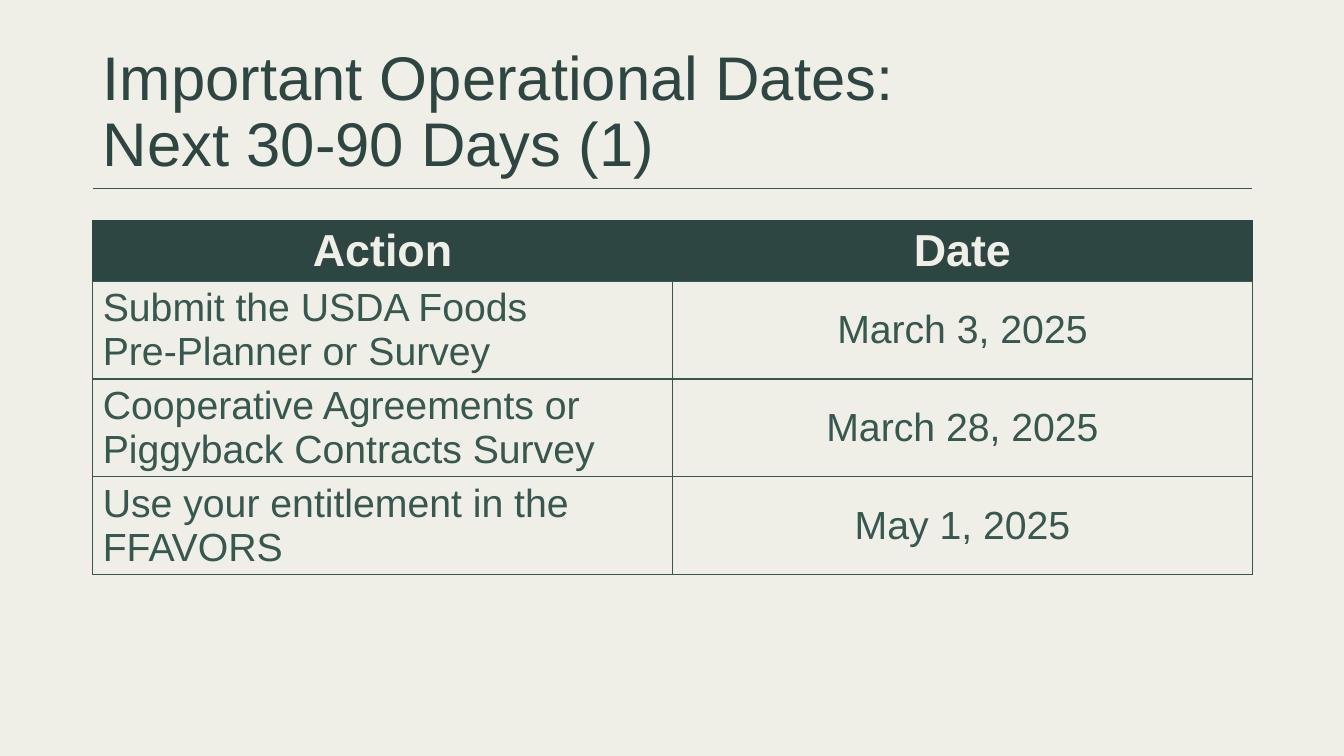
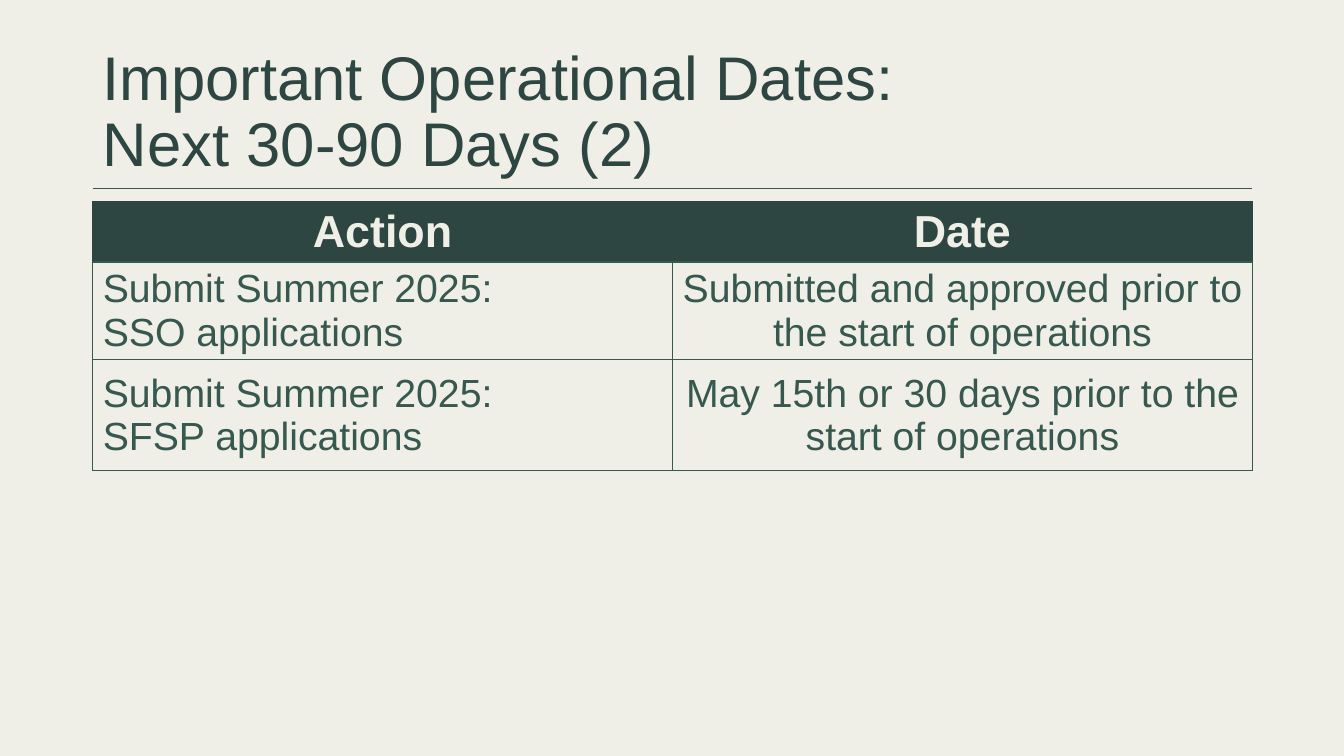
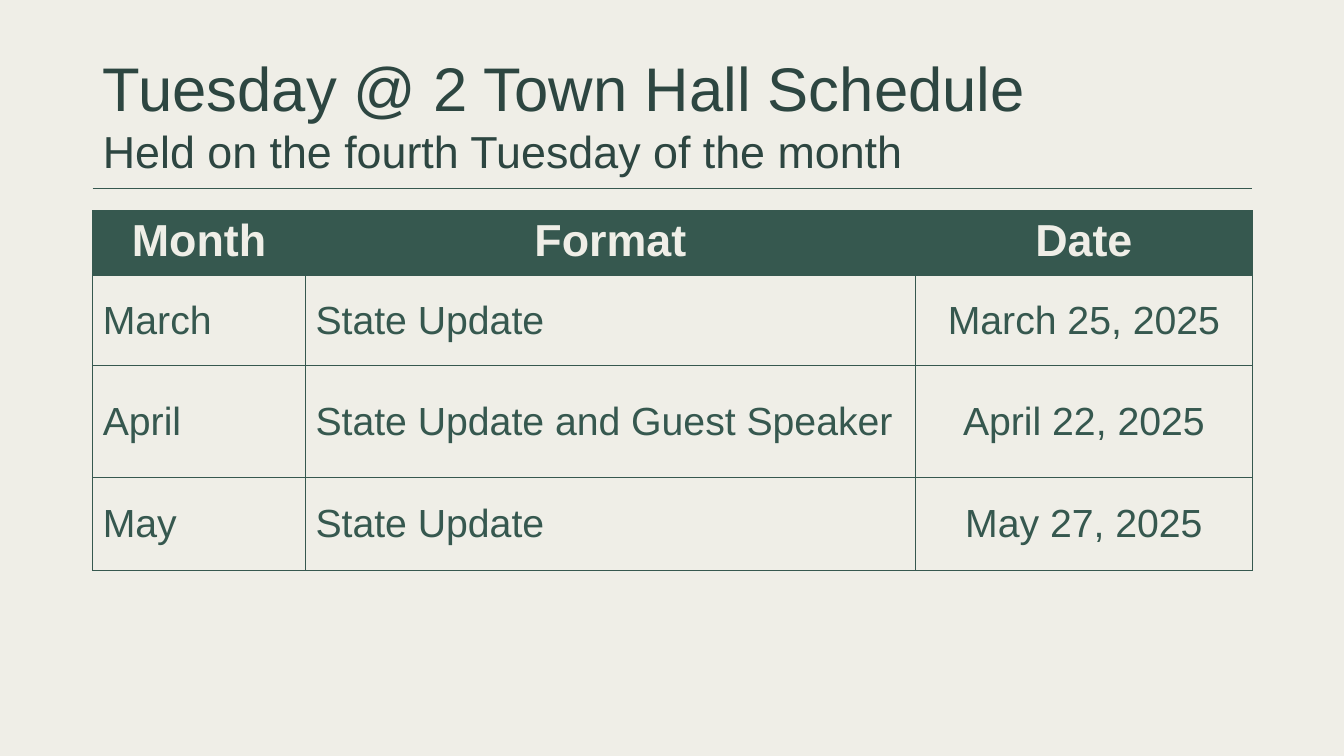
from dataclasses import dataclass

from lxml import etree
from pptx import Presentation
from pptx.dml.color import RGBColor
from pptx.enum import shapes, text
from pptx.oxml import ns
from pptx.util import Inches, Pt

PAPER = "EFEEE7"
PINE = "2D4641"
GREEN = "36584F"
FONT = "Arial"
LEFT, WIDTH = 0.92, 11.5
TITLE_TOP, TITLE_HEIGHT = 0.4, 1.45
RULE_TOP = 1.87
TITLE_SIZE, HEADING_SIZE, BODY_SIZE = 44, 32, 28


@dataclass(frozen=True)
class Schedule:
    title_lines: tuple[tuple[str, int], ...]
    title_format: dict[str, object]
    top: float
    column_widths: tuple[float, ...]
    row_heights: tuple[float, ...]
    heading_fill: str
    heading_anchor: text.MSO_ANCHOR
    rows: tuple[tuple[str, ...], ...]


def dates_title(number: int) -> tuple[tuple[str, int], ...]:
    return (
        ("Important Operational Dates:", TITLE_SIZE),
        (f"Next 30-90 Days ({number})", TITLE_SIZE),
    )


SCHEDULES = (
    Schedule(
        dates_title(1), {"line_spacing": 0.9}, 2.19, (5.75, 5.75),
        (0.6, 0.97, 0.97, 0.97), PINE, text.MSO_ANCHOR.MIDDLE,
        (
            ("Action", "Date"),
            ("Submit the USDA Foods\vPre-Planner or Survey", "March 3, 2025"),
            ("Cooperative Agreements or Piggyback Contracts Survey", "March 28, 2025"),
            ("Use your entitlement in the FFAVORS", "May 1, 2025"),
        ),
    ),
    Schedule(
        dates_title(2), {"line_spacing": 0.9}, 2, (5.75, 5.75),
        (0.6, 0.97, 1.1), PINE, text.MSO_ANCHOR.MIDDLE,
        (
            ("Action", "Date"),
            ("Submit Summer 2025:\nSSO applications",
             "Submitted and approved prior to the start of operations"),
            ("Submit Summer 2025:\nSFSP applications",
             "May 15th or 30 days prior to the start of operations"),
        ),
    ),
    Schedule(
        (("Tuesday @ 2 Town Hall Schedule", TITLE_SIZE),
         ("Held on the fourth Tuesday of the month", HEADING_SIZE)),
        {"space_after": Pt(12)}, 2.09, (2.11, 6.05, 3.34),
        (0.64, 0.9, 1.11, 0.92), GREEN, text.MSO_ANCHOR.TOP,
        (
            ("Month", "Format", "Date"),
            ("March", "State Update", "March 25, 2025"),
            ("April", "State Update and Guest Speaker", "April 22, 2025"),
            ("May", "State Update", "May 27, 2025"),
        ),
    ),
)


def colour(value: str) -> RGBColor:
    return RGBColor.from_string(value)


def apply(target, values: dict[str, object]) -> None:
    for attribute, value in values.items():
        setattr(target, attribute, value)


def format_run(run, size: int, ink: str, bold: bool = False) -> None:
    apply(run.font, {"name": FONT, "size": Pt(size), "bold": bold})
    run.font.color.rgb = colour(ink)


def draw_title(slide, schedule: Schedule) -> None:
    title = slide.shapes.title
    apply(title, {"left": Inches(LEFT), "top": Inches(TITLE_TOP),
                  "width": Inches(WIDTH), "height": Inches(TITLE_HEIGHT)})
    apply(title.text_frame, {"vertical_anchor": text.MSO_ANCHOR.MIDDLE, "word_wrap": True,
                             "auto_size": text.MSO_AUTO_SIZE.NONE})
    heading = title.text_frame.paragraphs[0]
    apply(heading, {"alignment": text.PP_ALIGN.LEFT, **schedule.title_format})
    for index, (wording, size) in enumerate(schedule.title_lines):
        if index:
            heading.add_line_break()
        run = heading.add_run()
        run.text = wording
        format_run(run, size, PINE)


def draw_rule(slide) -> None:
    rule = slide.shapes.add_connector(
        shapes.MSO_CONNECTOR.STRAIGHT, Inches(LEFT), Inches(RULE_TOP),
        Inches(LEFT + WIDTH), Inches(RULE_TOP))
    rule.line.color.rgb = colour(GREEN)
    rule.line.width = Pt(0.75)
    etree.SubElement(rule._element.spPr, ns.qn("a:effectLst"))


def draw_borders(cell, sides: dict[str, str]) -> None:
    properties = cell._tc.get_or_add_tcPr()
    for index, (side, ink) in enumerate(sides.items()):
        border = etree.Element(ns.qn(f"a:ln{side}"), w=str(Pt(1)))
        fill = etree.SubElement(border, ns.qn("a:solidFill"))
        etree.SubElement(fill, ns.qn("a:srgbClr"), val=ink)
        properties.insert(index, border)


def draw_cell(cell, wording: str, schedule: Schedule, is_heading: bool, is_date: bool) -> None:
    cell.text_frame.text = wording
    cell.vertical_anchor = schedule.heading_anchor if is_heading else text.MSO_ANCHOR.MIDDLE
    if is_heading:
        cell.fill.solid()
        cell.fill.fore_color.rgb = colour(schedule.heading_fill)
    else:
        cell.fill.background()
    size, ink = (HEADING_SIZE, PAPER) if is_heading else (BODY_SIZE, GREEN)
    centred = is_heading or is_date
    for paragraph in cell.text_frame.paragraphs:
        paragraph.alignment = text.PP_ALIGN.CENTER if centred else text.PP_ALIGN.LEFT
        for run in paragraph.runs:
            format_run(run, size, ink, bold=is_heading)
    edge = schedule.heading_fill if is_heading else GREEN
    draw_borders(cell, {"L": edge, "R": edge, "T": edge if is_heading else GREEN, "B": GREEN})


def draw_table(slide, schedule: Schedule) -> None:
    table = slide.shapes.add_table(
        len(schedule.rows), len(schedule.column_widths), Inches(LEFT), Inches(schedule.top),
        Inches(WIDTH), Inches(sum(schedule.row_heights))).table
    apply(table, {"first_row": False, "horz_banding": False})
    for column, width in zip(table.columns, schedule.column_widths):
        column.width = Inches(width)
    for row, height in zip(table.rows, schedule.row_heights):
        row.height = Inches(height)
    last = len(schedule.column_widths) - 1
    for row_index, wordings in enumerate(schedule.rows):
        for column_index, wording in enumerate(wordings):
            draw_cell(table.cell(row_index, column_index), wording, schedule,
                      is_heading=row_index == 0, is_date=column_index == last)


def main() -> None:
    deck = Presentation()
    apply(deck, {"slide_width": Inches(13.33), "slide_height": Inches(7.5)})
    backdrop = deck.slide_master.background.fill
    backdrop.solid()
    backdrop.fore_color.rgb = colour(PAPER)
    for schedule in SCHEDULES:
        slide = deck.slides.add_slide(deck.slide_layouts.get_by_name("Title Only"))
        draw_rule(slide)
        draw_title(slide, schedule)
        draw_table(slide, schedule)
    deck.save("out.pptx")


if __name__ == "__main__":
    main()
